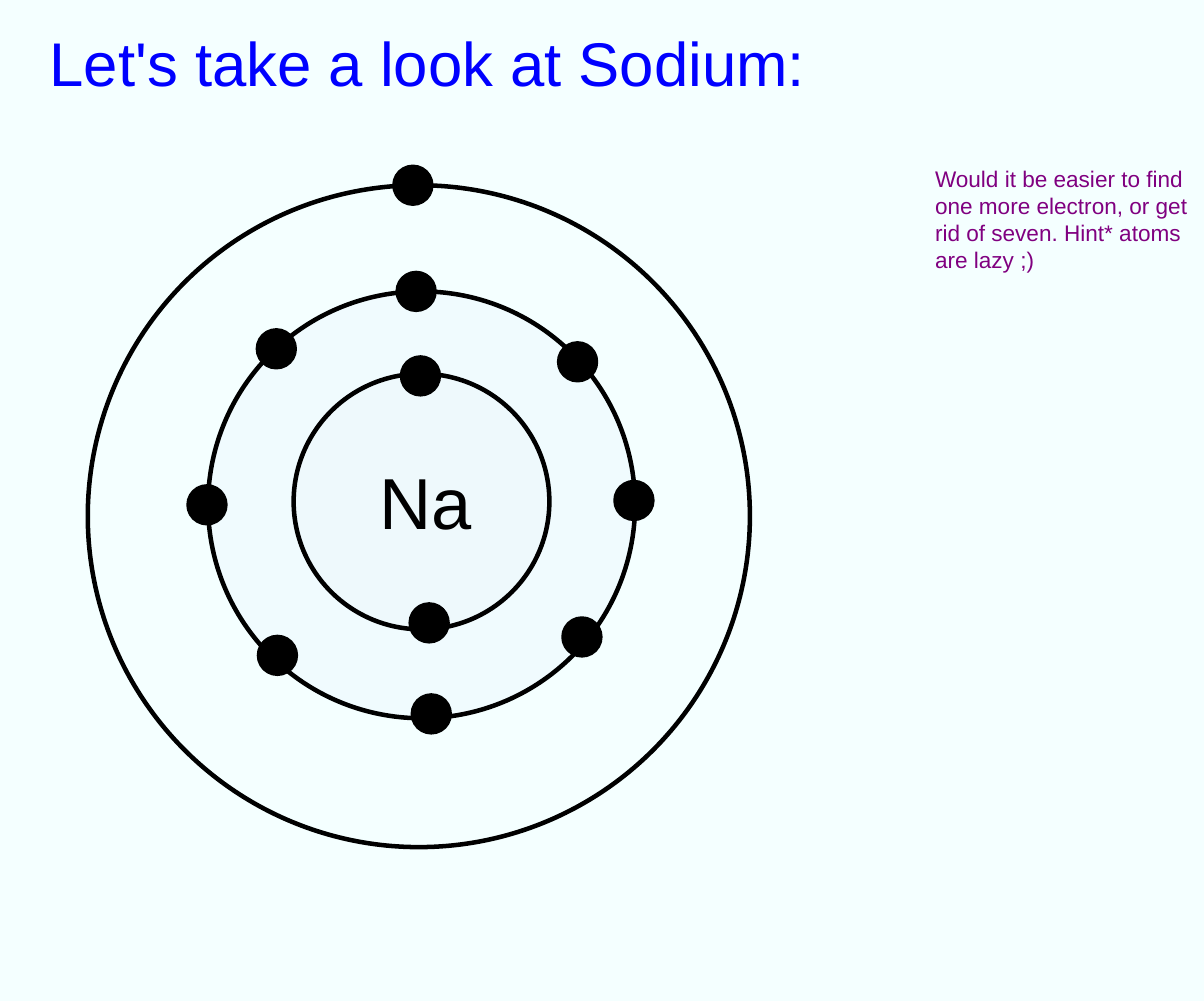
from dataclasses import dataclass

from pptx import Presentation
from pptx.dml.color import RGBColor
from pptx.enum.shapes import MSO_SHAPE as Preset
from pptx.shapes.autoshape import Shape
from pptx.slide import Slide
from pptx.util import Pt

EMU_PER_PX = 9144
ELECTRON_SIZE = 34
COLORS = {
    "background": "F4FFFF",
    "middle shell": "F0FBFE",
    "inner shell": "EEF9FC",
    "title": "0000FF",
    "hint": "800080",
    "ink": "000000",
}


@dataclass(frozen=True)
class Label:
    text: str
    left: int
    top: int
    width: int
    height: int
    size: int
    color: str


@dataclass(frozen=True)
class Shell:
    """An electron shell, with the centres of its electrons."""
    left: int
    top: int
    diameter: int
    fill: str
    electrons: tuple[tuple[int, int], ...]


LABELS = [
    Label("Let's take a look at Sodium:", 36, 18, 964, 79, 41, "title"),
    Label("Would it be easier to find one more electron, or get rid of seven. "
          "Hint* atoms are lazy ;)", 853, 147, 253, 111, 15, "hint"),
    Label("Na", 340, 417, 130, 91, 48, "ink"),
]

SHELLS = [
    Shell(81, 171, 611, "background", ((381, 171),)),
    Shell(192, 269, 394, "middle shell", (
        (384, 269), (533, 334), (585, 462), (537, 588),
        (398, 659), (256, 605), (191, 466), (255, 322))),
    Shell(271, 345, 236, "inner shell", ((388, 347), (396, 575))),
]


def px(length: int) -> int:
    return length * EMU_PER_PX


def color(name: str) -> RGBColor:
    return RGBColor.from_string(COLORS[name])


def add_circle(page: Slide, left: int, top: int, diameter: int, fill: str) -> Shape:
    circle = page.shapes.add_shape(
        Preset.OVAL, px(left), px(top), px(diameter), px(diameter))
    circle.shadow.inherit = False
    circle.fill.solid()
    circle.fill.fore_color.rgb = color(fill)
    circle.line.color.rgb = color("ink")
    circle.line.width = Pt(3)
    return circle


def add_shell(page: Slide, shell: Shell) -> None:
    add_circle(page, shell.left, shell.top, shell.diameter, shell.fill)
    radius = ELECTRON_SIZE // 2
    for x, y in shell.electrons:
        add_circle(page, x - radius, y - radius, ELECTRON_SIZE, "ink")


def add_label(page: Slide, label: Label) -> None:
    box = page.shapes.add_textbox(
        px(label.left), px(label.top), px(label.width), px(label.height))
    box.text_frame.text = label.text
    box.text_frame.word_wrap = True
    font = box.text_frame.paragraphs[0].runs[0].font
    font.name = "Arial"
    font.size = Pt(label.size)
    font.color.rgb = color(label.color)


def main() -> None:
    deck = Presentation()
    deck.slide_width, deck.slide_height = px(1111), px(924)
    page = deck.slides.add_slide(deck.slide_layouts[6])
    page.background.fill.solid()
    page.background.fill.fore_color.rgb = color("background")
    for shell in SHELLS:
        add_shell(page, shell)
    for label in LABELS:
        add_label(page, label)
    deck.save("out.pptx")


if __name__ == "__main__":
    main()
